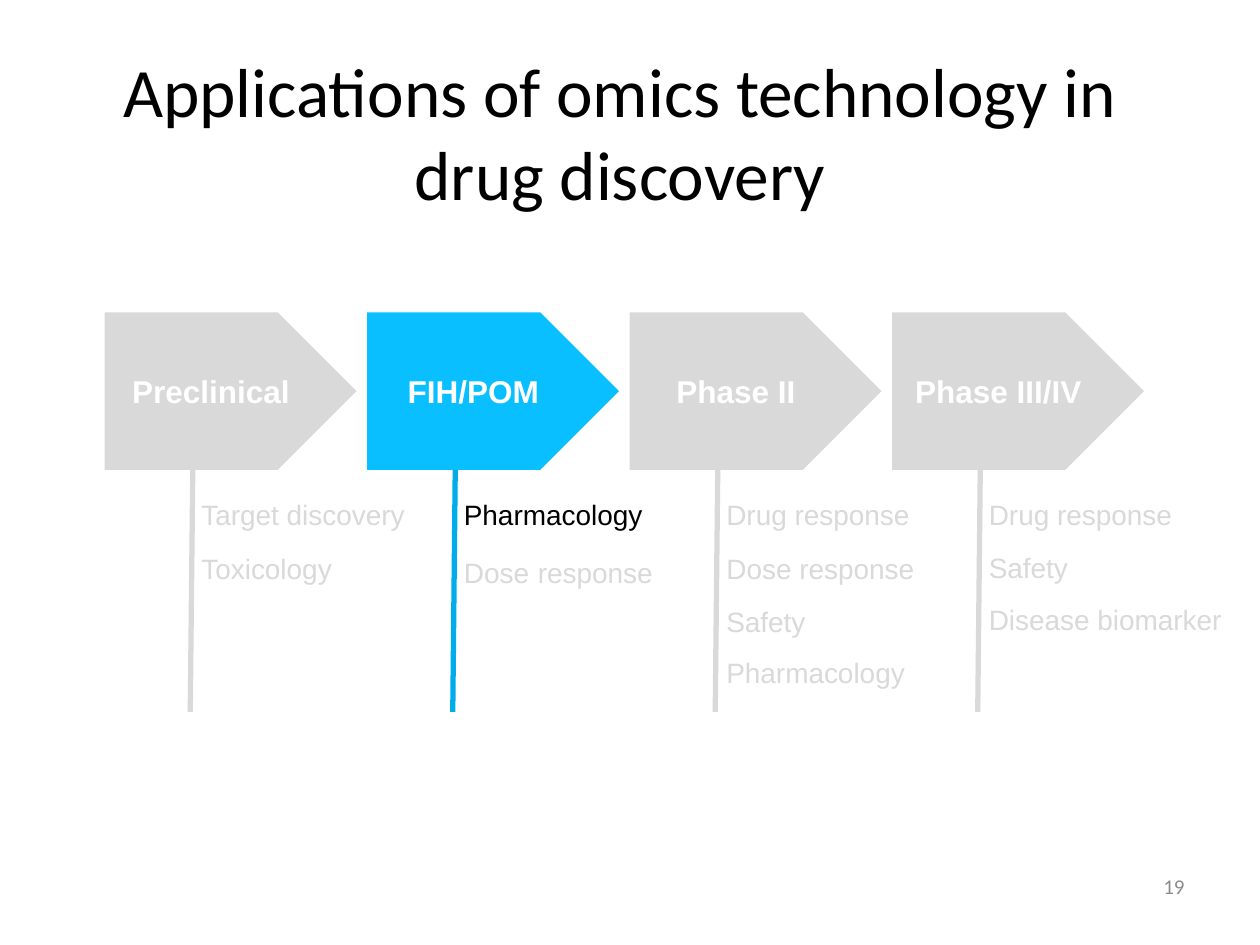
from lxml.etree import SubElement
from pptx import Presentation
from pptx.dml.color import RGBColor
from pptx.enum.shapes import MSO_CONNECTOR, MSO_SHAPE
from pptx.enum.text import MSO_ANCHOR, MSO_AUTO_SIZE, PP_ALIGN
from pptx.oxml.ns import qn
from pptx.util import Inches, Pt

GREY = "D9D9D9"
BLUE = "09BFFF"
DEEP_BLUE = "00ADEA"
BLACK = "000000"
WHITE = "FFFFFF"
PAGE_GREY = "8C8C8C"


def colour(value):
    return RGBColor.from_string(value)


class SlideBuilder:
    heading = {"name": "Calibri", "size": Pt(39.6)}
    page_number = {"name": "Calibri", "size": Pt(12)}
    stage = {"name": "Arial", "size": Pt(18), "bold": True}
    item = {"name": "Arial", "size": Pt(16)}

    def __init__(self, slide):
        self.slide = slide

    def place(self, shape, left, top, width, height):
        bounds = {"left": left, "top": top, "width": width, "height": height}
        for name, value in bounds.items():
            setattr(shape, name, Inches(value))

    def add_text(self, shape, spans, style, text_colour, align, **frame_format):
        frame = shape.text_frame
        for name, value in frame_format.items():
            setattr(frame, name, value)
        para = frame.paragraphs[0]
        para.alignment = align
        for text, changes in spans:
            span = para.add_run()
            span.text = text
            for name, value in {**style, **changes}.items():
                setattr(span.font, name, value)
            span.font.color.rgb = colour(text_colour)

    def title(self, text, *bounds):
        box = self.slide.shapes.title
        self.place(box, *bounds)
        self.add_text(box, [(text, {})], self.heading, BLACK, PP_ALIGN.CENTER,
                      vertical_anchor=MSO_ANCHOR.MIDDLE, word_wrap=True,
                      auto_size=MSO_AUTO_SIZE.NONE)

    def number(self, text, *bounds):
        box = self.slide.shapes.add_textbox(*map(Inches, bounds))
        self.add_text(box, [(text, {})], self.page_number, PAGE_GREY, PP_ALIGN.RIGHT,
                      vertical_anchor=MSO_ANCHOR.MIDDLE, word_wrap=True)

    def arrow(self, text, fill, *bounds):
        shape = self.slide.shapes.add_shape(MSO_SHAPE.PENTAGON, *map(Inches, bounds))
        shape.shadow.inherit = False
        shape.fill.solid()
        shape.fill.fore_color.rgb = colour(fill)
        shape.line.fill.background()
        self.add_text(shape, [(text, {})], self.stage, WHITE, PP_ALIGN.CENTER,
                      vertical_anchor=MSO_ANCHOR.MIDDLE, word_wrap=True)

    def stem(self, line_colour, *ends):
        line = self.slide.shapes.add_connector(MSO_CONNECTOR.STRAIGHT, *map(Inches, ends))
        line.line.color.rgb = colour(line_colour)
        line.line.width = Pt(3)
        SubElement(line._element.spPr, qn("a:effectLst"))

    def label(self, spans, text_colour, *bounds):
        box = self.slide.shapes.add_textbox(*map(Inches, bounds))
        self.add_text(box, spans, self.item, text_colour, PP_ALIGN.LEFT,
                      word_wrap=False, auto_size=MSO_AUTO_SIZE.SHAPE_TO_FIT_TEXT)


def main():
    deck = Presentation()
    deck.slide_width = Inches(10)
    deck.slide_height = Inches(7.5)
    page = SlideBuilder(deck.slides.add_slide(deck.slide_layouts[5]))
    page.title("Applications of omics technology in drug discovery", 0.42, 0.42, 9, 1.25)
    page.number("19", 7.17, 6.83, 2.33, 0.4)

    dose_spans = [("Dose", {}), (" ", {"size": Pt(18)}), ("response", {})]
    stages = [
        ("Preclinical", GREY, GREY, [
            ([("Target discovery", {})], GREY, 3.9, 1.84, 0.37),
            ([("Toxicology", {})], GREY, 4.33, 1.25, 0.37),
        ]),
        ("FIH/POM", BLUE, DEEP_BLUE, [
            ([("Pharmacology", {})], BLACK, 3.9, 1.63, 0.37),
            (dose_spans, GREY, 4.33, 1.78, 0.4),
        ]),
        ("Phase II", GREY, GREY, [
            ([("Drug response", {})], GREY, 3.9, 1.67, 0.37),
            ([("Dose response", {})], GREY, 4.33, 1.71, 0.37),
            ([("Safety", {})], GREY, 4.75, 0.84, 0.37),
            ([("Pharmacology", {})], GREY, 5.15, 1.63, 0.37),
        ]),
        ("Phase III/IV", GREY, GREY, [
            ([("Drug response", {})], GREY, 3.9, 1.67, 0.37),
            ([("Safety", {})], GREY, 4.32, 0.84, 0.37),
            ([("Disease biomarker", {})], GREY, 4.73, 2.07, 0.37),
        ]),
    ]
    first_left, arrow_top, arrow_width, arrow_height = 0.83, 2.48, 2, 1.25
    pitch = arrow_width + 1 / 12
    arrow_bottom = arrow_top + arrow_height
    for index, (name, fill, stem_colour, items) in enumerate(stages):
        left = first_left + index * pitch
        page.arrow(name, fill, left, arrow_top, arrow_width, arrow_height)
        page.stem(stem_colour, left + 0.7, arrow_bottom, left + 0.68, 5.65)
        for spans, text_colour, top, width, height in items:
            page.label(spans, text_colour, left + 0.67, top, width, height)

    deck.save("out.pptx")


if __name__ == "__main__":
    main()
